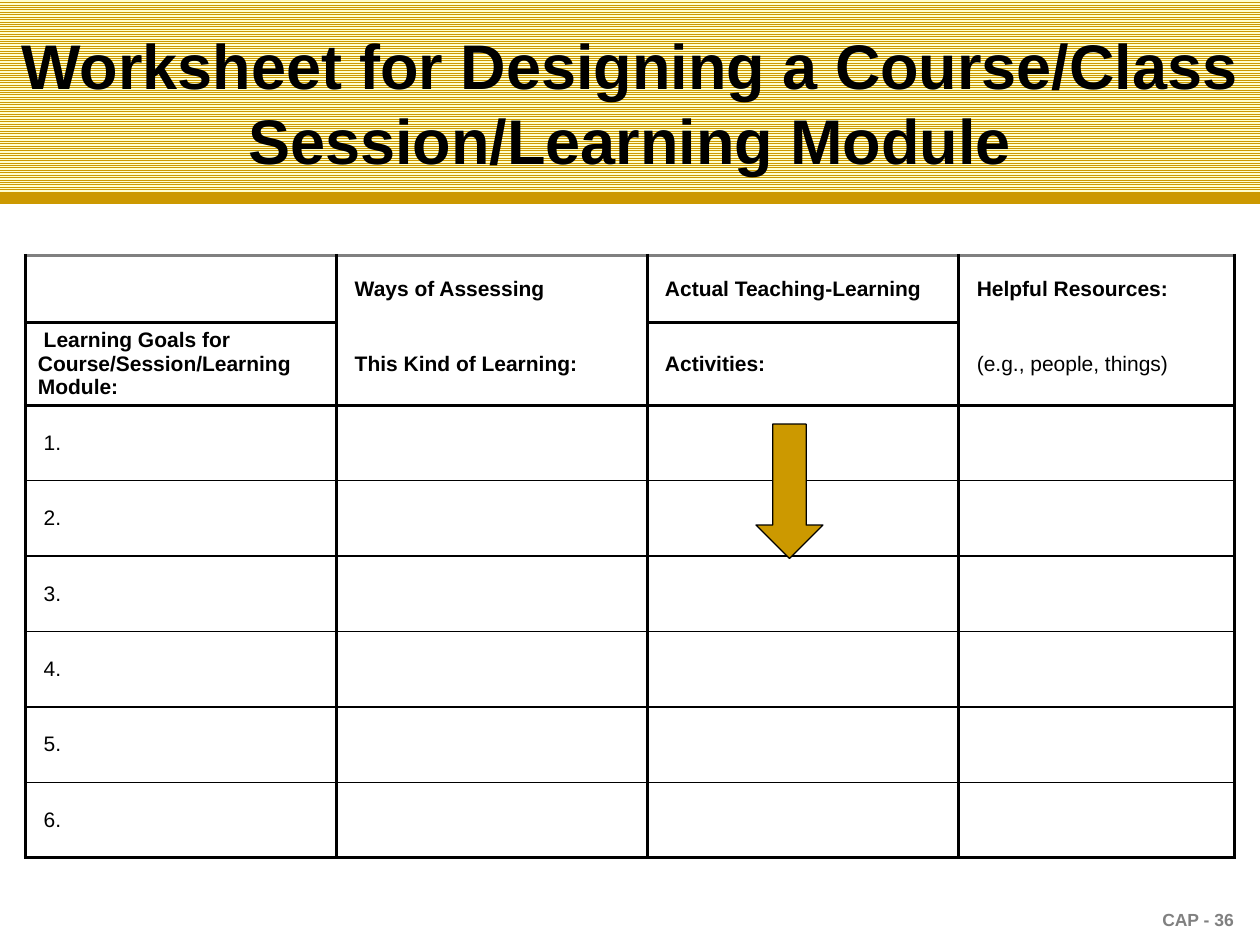
from typing import NamedTuple, Optional

from lxml.etree import SubElement
from pptx import Presentation
from pptx.dml.color import RGBColor
from pptx.enum.dml import MSO_PATTERN
from pptx.enum.shapes import MSO_CONNECTOR, MSO_SHAPE
from pptx.enum.text import MSO_ANCHOR, PP_ALIGN
from pptx.oxml import parse_xml
from pptx.oxml.ns import nsdecls, qn
from pptx.util import Cm, Pt

BLACK, GRAY, GOLD, CREAM = "000000", "808080", "CC9900", "FFFFCC"
FONT = "Arial"


class Run(NamedTuple):
    text: str
    bold: bool = True


class Border(NamedTuple):
    width: float
    color: str = BLACK


class Label(NamedTuple):
    left: float
    top: float
    width: float
    height: float
    text: str
    size: float
    color: str
    align: PP_ALIGN
    anchor: MSO_ANCHOR


HEADINGS = [
    [[], [Run(" Ways of Assessing")], [Run(" Actual Teaching-Learning")],
     [Run(" Helpful Resources:")]],
    [[Run(" Learning Goals for Course/Session/Learning Module:")],
     [Run(" This Kind of Learning:")], [Run(" Activities:")],
     [Run(" "), Run("(e.g., people, things)", False)]],
]
GOALS = [[[Run(f" {number}.", False)], [], [], []] for number in range(1, 7)]
WORKSHEET = HEADINGS + GOALS
COLUMN_WIDTHS = [6.27, 6.27, 6.27, 5.57]
ROW_HEIGHTS = [1.35, 1.67] + [1.52] * len(GOALS)
SPLIT_HEADING_COLUMNS = (0, 2)

LABELS = [
    Label(19.2, 18.21, 5.92, 0.46, "CAP - 36", 10, GRAY,
          PP_ALIGN.RIGHT, MSO_ANCHOR.TOP),
    Label(0, 0.46, 25.4, 3.18,
          "Worksheet for Designing a Course/Class Session/Learning Module",
          36, BLACK, PP_ALIGN.CENTER, MSO_ANCHOR.MIDDLE),
]


def rgb(color: str) -> RGBColor:
    return RGBColor.from_string(color)


def add_run(paragraph, run: Run, size: float, color: str) -> None:
    piece = paragraph.add_run()
    piece.text = run.text
    piece.font.name = FONT
    piece.font.size = Pt(size)
    piece.font.bold = run.bold
    piece.font.color.rgb = rgb(color)


def add_label(slide, label: Label) -> None:
    box = slide.shapes.add_textbox(
        Cm(label.left), Cm(label.top), Cm(label.width), Cm(label.height))
    frame = box.text_frame
    frame.word_wrap = True
    frame.vertical_anchor = label.anchor
    paragraph = frame.paragraphs[0]
    paragraph.alignment = label.align
    add_run(paragraph, Run(label.text), label.size, label.color)


def row_border(edge: int, column: int) -> Optional[Border]:
    if edge == 0:
        return Border(2.25, GRAY)
    if edge == 1:
        return Border(2.25) if column in SPLIT_HEADING_COLUMNS else None
    if edge in (len(HEADINGS), len(WORKSHEET)):
        return Border(2)
    return Border(1)


def set_borders(cell, row: int, column: int) -> None:
    side = Border(2.25 if row == 0 else 2)
    borders = {"L": side, "R": side, "T": row_border(row, column),
               "B": row_border(row + 1, column)}
    properties = cell._tc.get_or_add_tcPr()
    for position, (name, border) in enumerate(borders.items()):
        width = Pt(border.width) if border else 0
        line = parse_xml(f'<a:ln{name} {nsdecls("a")} w="{width}"/>')
        if border:
            fill = SubElement(line, qn("a:solidFill"))
            SubElement(fill, qn("a:srgbClr"), val=border.color)
        else:
            SubElement(line, qn("a:noFill"))
        properties.insert(position, line)


def add_worksheet(slide) -> None:
    table = slide.shapes.add_table(
        len(ROW_HEIGHTS), len(COLUMN_WIDTHS), Cm(0.51), Cm(5.15),
        Cm(sum(COLUMN_WIDTHS)), Cm(sum(ROW_HEIGHTS))).table
    table.first_row = False
    table.horz_banding = False
    for column, width in zip(table.columns, COLUMN_WIDTHS):
        column.width = Cm(width)
    for row, height in zip(table.rows, ROW_HEIGHTS):
        row.height = Cm(height)
    for row, entries in enumerate(WORKSHEET):
        for column, runs in enumerate(entries):
            cell = table.cell(row, column)
            cell.fill.background()
            cell.vertical_anchor = MSO_ANCHOR.MIDDLE
            cell.margin_top = cell.margin_bottom = Cm(0.1)
            for run in runs:
                add_run(cell.text_frame.paragraphs[0], run, 12, BLACK)
            set_borders(cell, row, column)


def add_banner(slide) -> None:
    banner = slide.shapes.add_shape(
        MSO_SHAPE.RECTANGLE, 0, 0, Cm(25.4), Cm(4.01))
    banner.shadow.inherit = False
    banner.fill.patterned()
    banner.fill.pattern = MSO_PATTERN.NARROW_HORIZONTAL
    banner.fill.fore_color.rgb = rgb(GOLD)
    banner.fill.back_color.rgb = rgb(CREAM)
    banner.line.fill.background()
    rule = slide.shapes.add_connector(
        MSO_CONNECTOR.STRAIGHT, 0, Cm(4), Cm(25.4), Cm(4))
    rule.line.color.rgb = rgb(GOLD)
    rule.line.width = Pt(6.5)
    SubElement(rule._element.spPr, qn("a:effectLst"))


def add_arrow(slide) -> None:
    arrow = slide.shapes.add_shape(
        MSO_SHAPE.DOWN_ARROW, Cm(15.24), Cm(8.55), Cm(1.35), Cm(2.71))
    arrow.shadow.inherit = False
    arrow.fill.solid()
    arrow.fill.fore_color.rgb = rgb(GOLD)
    arrow.line.color.rgb = rgb(BLACK)
    arrow.line.width = Pt(0.75)


def main() -> None:
    presentation = Presentation()
    presentation.slide_width = Cm(25.4)
    presentation.slide_height = Cm(19.05)
    slide = presentation.slides.add_slide(presentation.slide_layouts[6])
    add_banner(slide)
    add_worksheet(slide)
    add_arrow(slide)
    for label in LABELS:
        add_label(slide, label)
    presentation.save("out.pptx")


if __name__ == "__main__":
    main()
